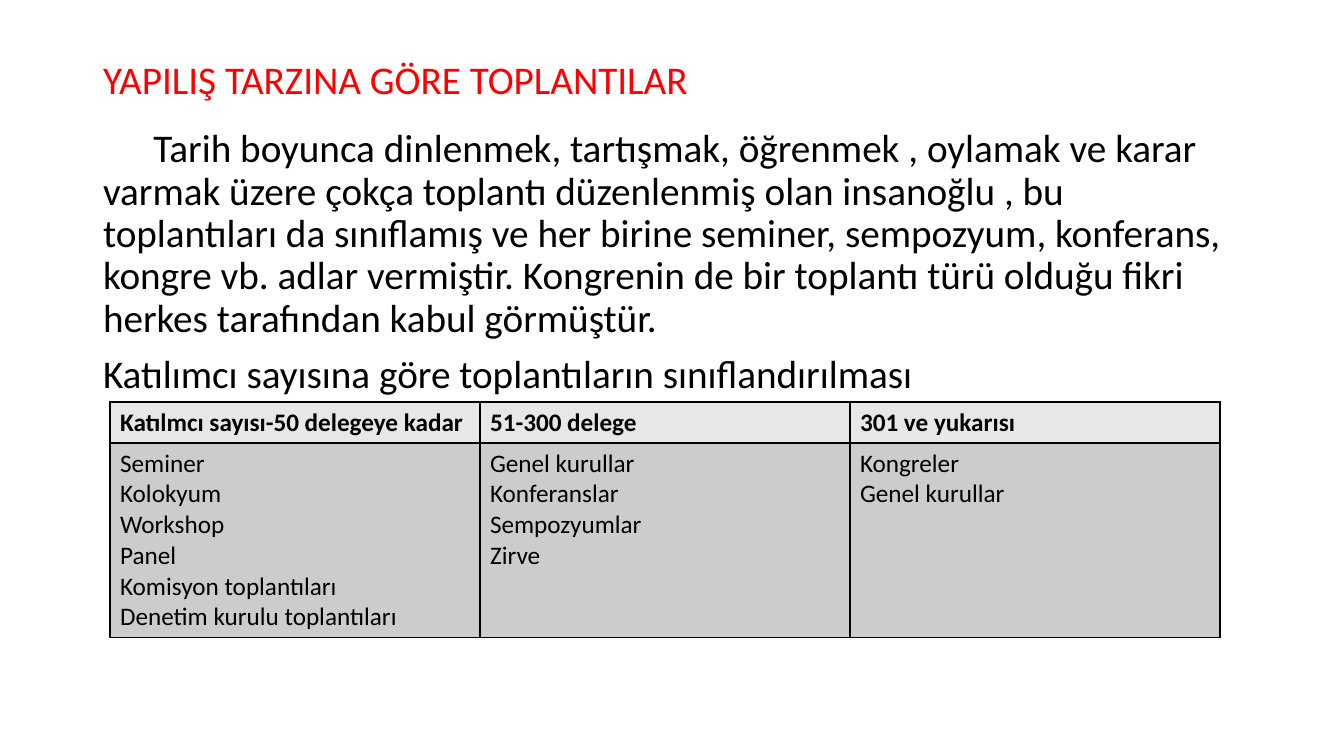
import dataclasses

import pptx
import pptx.dml.color
import pptx.enum.text
import pptx.oxml
import pptx.oxml.ns
import pptx.util

SCALE = 914400 / 100.8


@dataclasses.dataclass(frozen=True)
class Theme:
    """Hold the colours, font and type sizes of the slide."""
    font: str = "Calibri"
    title: str = "FF0000"
    ink: str = "000000"
    head: str = "E7E7E7"
    cell: str = "CCCCCC"
    large: int = 28
    small: int = 18


THEME = Theme()

HEADING = "YAPILIŞ TARZINA GÖRE TOPLANTILAR"
BODY = [
    "\tTarih boyunca dinlenmek, tartışmak, öğrenmek , oylamak ve karar varmak "
    "üzere çokça toplantı düzenlenmiş olan insanoğlu , bu toplantıları da "
    "sınıflamış ve her birine seminer, sempozyum, konferans, kongre vb. adlar "
    "vermiştir. Kongrenin de bir toplantı türü olduğu fikri herkes tarafından "
    "kabul görmüştür.",
    "Katılımcı sayısına göre toplantıların sınıflandırılması",
]
GROUPS = {
    "Katılmcı sayısı-50 delegeye kadar": [
        "Seminer", "Kolokyum", "Workshop", "Panel",
        "Komisyon toplantıları", "Denetim kurulu toplantıları"],
    "51-300 delege": ["Genel kurullar", "Konferanslar", "Sempozyumlar", "Zirve"],
    "301 ve yukarısı": ["Kongreler", "Genel kurullar"],
}


def px(count):
    """Turn pixels into EMU."""
    return pptx.util.Emu(round(count * SCALE))


def rgb(code):
    """Make a colour from its hex code."""
    return pptx.dml.color.RGBColor.from_string(code)


def add_node(parent, tag, inner="", **attrs):
    """Append a drawing element with its attributes and inner XML."""
    pairs = "".join(f' {key}="{value}"' for key, value in attrs.items())
    space = pptx.oxml.ns.nsdecls("a")
    parent.append(pptx.oxml.parse_xml(f"<a:{tag} {space}{pairs}>{inner}</a:{tag}>"))


def style(para, size, color, bold=False):
    """Format the runs of a left-aligned paragraph."""
    para.alignment = pptx.enum.text.PP_ALIGN.LEFT
    for run in para.runs:
        run.font.name = THEME.font
        run.font.size = pptx.util.Pt(size)
        run.font.bold = bold
        run.font.color.rgb = rgb(color)


def fill_holder(shape, box, lines, color, anchor):
    """Place a placeholder and set its plain paragraphs."""
    shape.left, shape.top, shape.width, shape.height = map(px, box)
    frame = shape.text_frame
    frame.text = "\n".join(lines)
    frame.word_wrap = True
    frame.auto_size = pptx.enum.text.MSO_AUTO_SIZE.NONE
    frame.vertical_anchor = anchor
    for index, para in enumerate(frame.paragraphs):
        para.line_spacing = 0.9
        para.space_before = pptx.util.Pt(10 if index else 0)
        props = para._p.get_or_add_pPr()
        props.set("marL", "0")
        props.set("indent", "0")
        add_node(props, "buNone")
        add_node(props, "tabLst", '<a:tab pos="914400" algn="l"/>')
        style(para, THEME.large, color)


def fill_cell(cell, text, color, bold):
    """Write a table cell with its borders and fill."""
    cell.text = text
    props = cell._tc.get_or_add_tcPr()
    ink = f'<a:solidFill><a:srgbClr val="{THEME.ink}"/></a:solidFill>'
    for side in "LRTB":
        add_node(props, f"ln{side}", ink, w=12700)
    cell.fill.solid()
    cell.fill.fore_color.rgb = rgb(color)
    for para in cell.text_frame.paragraphs:
        style(para, THEME.small, THEME.ink, bold)


def add_grid(slide, box, heights, groups):
    """Add a table with one column per group."""
    table = slide.shapes.add_table(2, len(groups), *map(px, box)).table
    table.horz_banding = False
    for row, height in zip(table.rows, heights):
        row.height = px(height)
    for col, (head, items) in enumerate(groups.items()):
        fill_cell(table.cell(0, col), head, THEME.head, True)
        fill_cell(table.cell(1, col), "\n".join(items), THEME.cell, False)


def main():
    """Build and save the slide."""
    deck = pptx.Presentation()
    deck.slide_width, deck.slide_height = px(1344), px(756)
    slide = deck.slides.add_slide(deck.slide_layouts[1])
    anchor = pptx.enum.text.MSO_ANCHOR
    title, body = slide.placeholders
    fill_holder(title, (93, 40, 1159, 84), [HEADING], THEME.title, anchor.MIDDLE)
    fill_holder(body, (93, 124, 1159, 556), BODY, THEME.ink, anchor.TOP)
    add_grid(slide, (110, 402, 1110, 235), (41, 194), GROUPS)
    deck.save("out.pptx")


if __name__ == "__main__":
    main()
